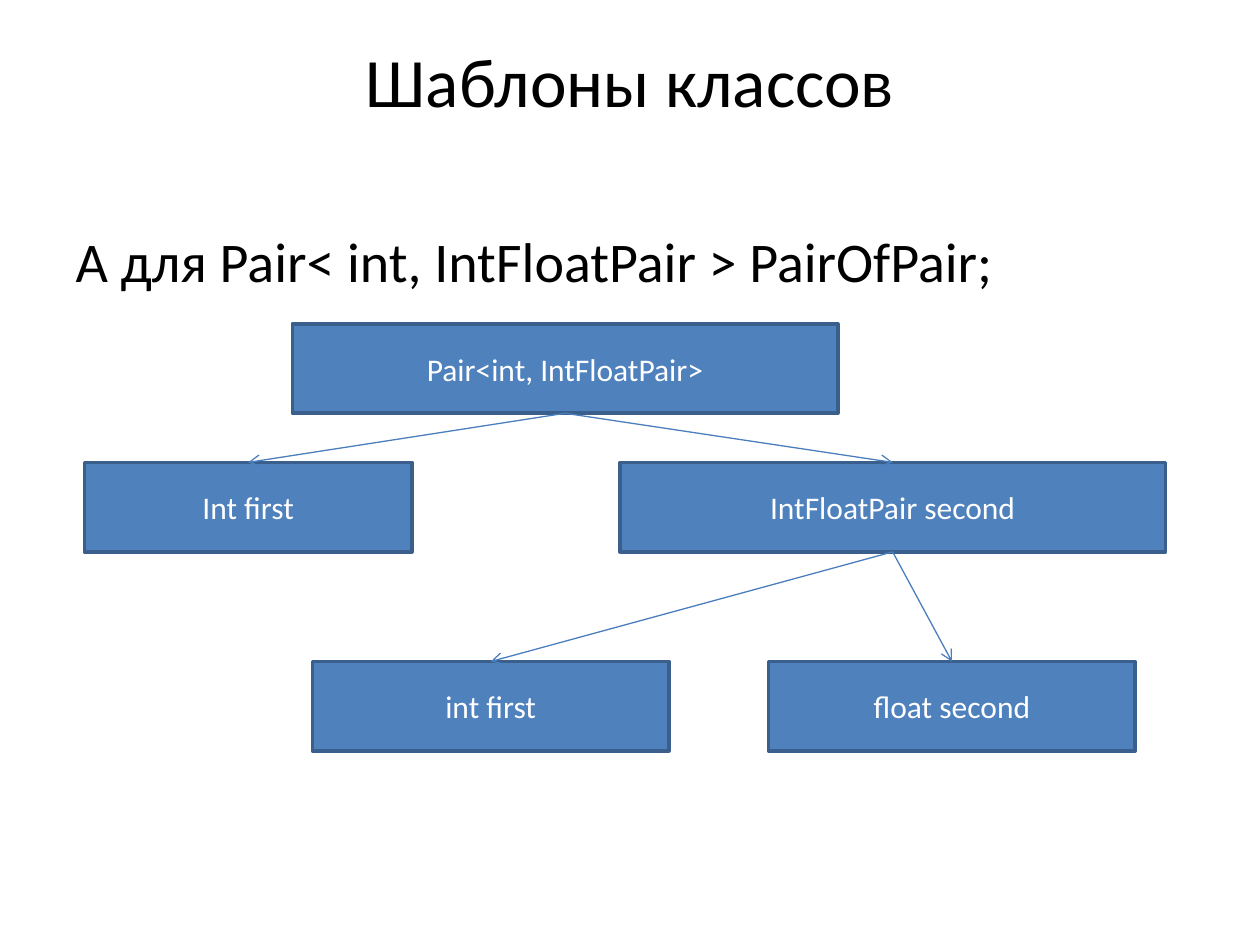
from lxml import etree
from pptx import Presentation
from pptx.dml.color import RGBColor
from pptx.enum.shapes import MSO_CONNECTOR, MSO_SHAPE
from pptx.enum.text import MSO_ANCHOR, PP_ALIGN
from pptx.oxml.ns import qn
from pptx.util import Inches, Pt

RECT = MSO_SHAPE.RECTANGLE
STRAIGHT = MSO_CONNECTOR.STRAIGHT
TOP, MIDDLE = MSO_ANCHOR.TOP, MSO_ANCHOR.MIDDLE
LEFT, CENTER = PP_ALIGN.LEFT, PP_ALIGN.CENTER

BLACK = RGBColor(0x00, 0x00, 0x00)
WHITE = RGBColor(0xFF, 0xFF, 0xFF)
BLUE = RGBColor(0x4F, 0x81, 0xBD)
EDGE = RGBColor(0x3A, 0x5F, 0x8C)
ARROW = RGBColor(0x4B, 0x7E, 0xBC)

NODE_H = 0.71
# name: (text, left, top, width), relative to the tree's corner
NODES = {
    "pair": ("Pair<int, IntFloatPair>", 1.65, 0, 4.33),
    "int": ("Int first", 0, 1.1, 2.6),
    "inner": ("IntFloatPair second", 4.25, 1.1, 4.33),
    "inner int": ("int first", 1.81, 2.68, 2.83),
    "inner float": ("float second", 5.43, 2.68, 2.91),
}
LINKS = [("pair", "int"), ("pair", "inner"),
         ("inner", "inner int"), ("inner", "inner float")]


def place(shape, left, top, width, height):
    shape.left, shape.top = Inches(left), Inches(top)
    shape.width, shape.height = Inches(width), Inches(height)


def write(shape, text, size, color, align, anchor):
    frame = shape.text_frame
    frame.text = text
    frame.word_wrap = True
    frame.vertical_anchor = anchor
    para = frame.paragraphs[0]
    para.alignment = align
    font = para.runs[0].font
    font.name, font.size = "Calibri", Pt(size)
    font.color.rgb = color
    return para


def add_title(slide, box):
    title = slide.shapes.title
    place(title, *box)
    write(title, "Шаблоны классов", 39.6, BLACK, CENTER, TOP)
    title.text_frame.margin_top = 0


def add_body(slide, box):
    body = slide.placeholders[1]
    place(body, *box)
    para = write(body, "А для Pair< int, IntFloatPair > PairOfPair;",
                 32, BLACK, LEFT, TOP)
    etree.SubElement(para._p.get_or_add_pPr(), qn("a:buNone"))


def add_node(slide, text, left, top, width):
    node = slide.shapes.add_shape(
        RECT, Inches(left), Inches(top), Inches(width), Inches(NODE_H))
    node.shadow.inherit = False
    node.fill.solid()
    node.fill.fore_color.rgb = BLUE
    node.line.color.rgb = EDGE
    node.line.width = Pt(2)
    write(node, text, 18, WHITE, CENTER, MIDDLE)
    return node


def add_link(slide, parent, child):
    """Draw an arrow from the parent's bottom to the child's top."""
    link = slide.shapes.add_connector(STRAIGHT, 0, 0, 0, 0)
    link.begin_connect(parent, 2)
    link.end_connect(child, 0)
    link.line.color.rgb = ARROW
    link.line.width = Pt(0.75)
    etree.SubElement(link.line._get_or_add_ln(), qn("a:tailEnd"), type="arrow")
    etree.SubElement(link._element.spPr, qn("a:effectLst"))


def add_tree(slide, left, top):
    nodes = {name: add_node(slide, text, left + x, top + y, width)
             for name, (text, x, y, width) in NODES.items()}
    for parent, child in LINKS:
        add_link(slide, nodes[parent], nodes[child])


def main():
    prs = Presentation()
    prs.slide_width, prs.slide_height = Inches(10), Inches(7.5)
    slide = prs.slides.add_slide(prs.slide_layouts[1])
    add_title(slide, (0.5, 0.3, 9, 1.25))
    add_body(slide, (0.5, 1.75, 9, 4.95))
    add_tree(slide, 0.67, 2.57)
    prs.save("out.pptx")


if __name__ == "__main__":
    main()
